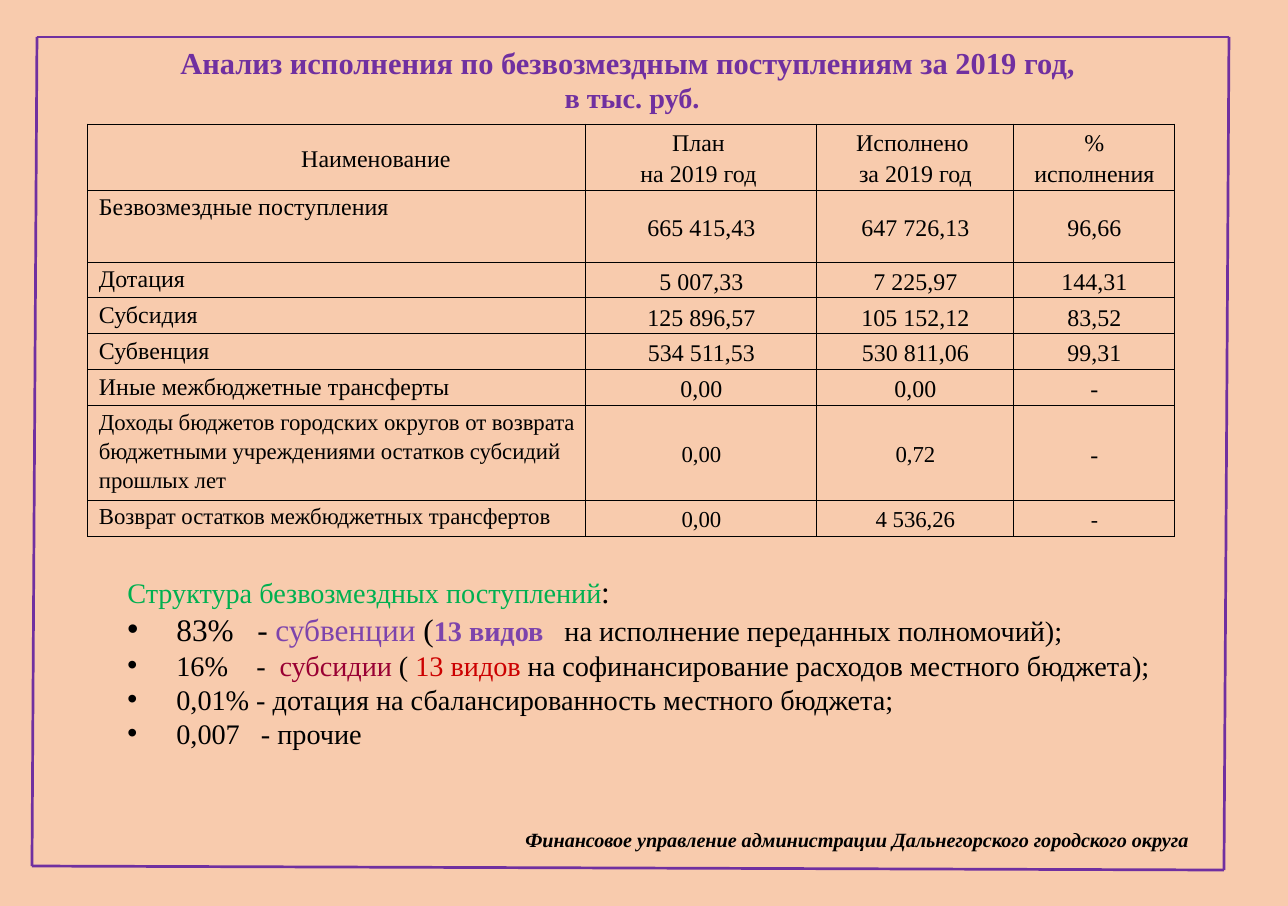
import pptx
import pptx.dml.color
import pptx.enum.shapes
import pptx.enum.text
import pptx.oxml
import pptx.oxml.ns
import pptx.util

RGB = pptx.dml.color.RGBColor
PEACH = RGB(0xF8, 0xCB, 0xAD)
PURPLE = RGB(0x70, 0x30, 0xA0)
LILAC = RGB(0x7D, 0x44, 0xAC)
GREEN = RGB(0x00, 0xB0, 0x50)
WINE = RGB(0x99, 0x00, 0x33)
RED = RGB(0xCC, 0x00, 0x00)
BLACK = RGB(0x00, 0x00, 0x00)

FONT = "Times New Roman"
SCALE = 914400 / 156.5
CENTER = pptx.enum.text.PP_ALIGN.CENTER
MIDDLE = pptx.enum.text.MSO_ANCHOR.MIDDLE

CORNERS = [(37, 37), (1229, 37), (1224, 870), (32, 866)]
COLS = [498, 231, 197, 161]

# height, text size, size in the last column, cells
ROWS = [
    (66, 11, 11, ["Наименование", "План \nна 2019 год ",
                  "Исполнено \nза 2019 год", "% исполнения"]),
    (72, 11, 11, ["Безвозмездные поступления", "665 415,43", "647 726,13", "96,66"]),
    (36, 11, 11, ["Дотация", "5 007,33", "7 225,97", "144,31"]),
    (36, 11, 11, ["Субсидия", "125 896,57", "105 152,12", "83,52"]),
    (36, 11, 11, ["Субвенция", "534 511,53", "530 811,06", "99,31"]),
    (36, 11, 11, ["Иные межбюджетные трансферты", "0,00", "0,00", "-"]),
    (94, 10.5, 11, ["Доходы бюджетов городских округов от возврата бюджетными "
                    "учреждениями остатков субсидий прошлых лет",
                    "0,00", "0,72", "-"]),
    (36, 10.5, 10, ["Возврат остатков межбюджетных трансфертов",
                    "0,00", "4 536,26", "-"]),
]

# each paragraph is a list of runs: text, size, colour, bold
TITLE = [
    [("Анализ исполнения по безвозмездным поступлениям за 2019 год, ", 14, PURPLE, True)],
    [("в тыс. руб.", 13, PURPLE, True)],
]
HEAD = [("Структура безвозмездных поступлений", 13, GREEN, False),
        (":", 14.4, BLACK, False)]
ITEMS = [
    [("83%   - ", 14.4, BLACK, False), ("субвенции ", 14.4, LILAC, False),
     ("(", 14.4, BLACK, False), ("13 видов   ", 13, LILAC, True),
     ("на исполнение переданных полномочий);", 13, BLACK, False)],
    [("16%    -  ", 13, BLACK, False), ("субсидии ", 13, WINE, False),
     ("( ", 13, BLACK, False), ("13 видов ", 13, RED, False),
     ("на софинансирование расходов местного бюджета);", 13, BLACK, False)],
    [("0,01% - дотация на сбалансированность местного бюджета;", 13, BLACK, False)],
    [("0,007   - прочие", 13, BLACK, False)],
]
FOOTER = [[("Финансовое управление администрации Дальнегорского городского округа",
            9.3, BLACK, True)]]


def px(num):
    return pptx.util.Emu(round(num * SCALE))


def style(obj, form):
    for name, value in form.items():
        setattr(obj, name, value)


def add_run(para, text, size, color, bold=False, italic=False):
    run = para.add_run()
    run.text = text
    style(run.font, {"name": FONT, "size": pptx.util.Pt(size),
                     "bold": bold, "italic": italic})
    run.font.color.rgb = color


def add_text(slide, box, paras, align=None, italic=False):
    frame = slide.shapes.add_textbox(*map(px, box)).text_frame
    frame.word_wrap = True
    for i, runs in enumerate(paras):
        para = frame.add_paragraph() if i else frame.paragraphs[0]
        para.alignment = align
        for run in runs:
            add_run(para, *run, italic=italic)
    return frame


def add_bullet(para):
    props = para._p.get_or_add_pPr()
    props.set("marL", str(px(49)))
    props.set("indent", str(px(-49)))
    for tag, key, value in (("buFont", "typeface", "Arial"), ("buChar", "char", "•")):
        pptx.oxml.ns.qn("a:" + tag)
        item = props.makeelement(pptx.oxml.ns.qn("a:" + tag), {key: value})
        props.append(item)


def add_border(slide):
    for start, end in zip(CORNERS, CORNERS[1:] + CORNERS[:1]):
        line = slide.shapes.add_connector(
            pptx.enum.shapes.MSO_CONNECTOR.STRAIGHT, *map(px, start + end))
        line.line.color.rgb = PURPLE
        line.line.width = pptx.util.Pt(1.25)
        props = line._element.spPr
        props.append(props.makeelement(pptx.oxml.ns.qn("a:effectLst"), {}))


def edge_cell(cell):
    """Draw a thin black line on all four sides of the cell."""
    props = cell._tc.get_or_add_tcPr()
    for i, side in enumerate(("lnL", "lnR", "lnT", "lnB")):
        props.insert(i, pptx.oxml.parse_xml(
            f'<a:{side} {pptx.oxml.ns.nsdecls("a")} w="6350"><a:solidFill>'
            f'<a:srgbClr val="{BLACK}"/></a:solidFill></a:{side}>'))


def fill_cell(cell, text, size, centered):
    style(cell, {"margin_left": px(11), "margin_right": px(11),
                 "margin_top": 0, "margin_bottom": 0})
    if centered:
        cell.vertical_anchor = MIDDLE
    frame = cell.text_frame
    for i, line in enumerate(text.split("\n")):
        para = frame.add_paragraph() if i else frame.paragraphs[0]
        style(para, {"line_spacing": 1.15, "alignment": CENTER if centered else None})
        add_run(para, line, size, BLACK)
    cell.fill.background()
    edge_cell(cell)


def add_grid(slide):
    high = sum(row[0] for row in ROWS)
    table = slide.shapes.add_table(
        len(ROWS), len(COLS), px(88), px(124), px(sum(COLS)), px(high)).table
    style(table, {"first_row": False, "horz_banding": False})
    for col, width in zip(table.columns, COLS):
        col.width = px(width)
    for r, (height, size, last, texts) in enumerate(ROWS):
        table.rows[r].height = px(height)
        for c, text in enumerate(texts):
            fill_cell(table.cell(r, c), text, last if c == 3 else size, r == 0 or c > 0)
    name = table.cell(0, 0).text_frame.paragraphs[0]
    name._p.get_or_add_pPr().set("marL", str(px(78)))


def main():
    deck = pptx.Presentation()
    style(deck, {"slide_width": px(1288), "slide_height": px(906)})
    slide = deck.slides.add_slide(deck.slide_layouts[6])
    slide.background.fill.solid()
    slide.background.fill.fore_color.rgb = PEACH

    add_text(slide, (510, 820, 742, 41), FOOTER, italic=True)
    add_border(slide)
    add_text(slide, (37, 36, 1190, 89), TITLE, CENTER)
    add_grid(slide)
    frame = add_text(slide, (112, 565, 1064, 228), [HEAD] + ITEMS)
    for para in frame.paragraphs[1:]:
        add_bullet(para)
    deck.save("out.pptx")


if __name__ == "__main__":
    main()
